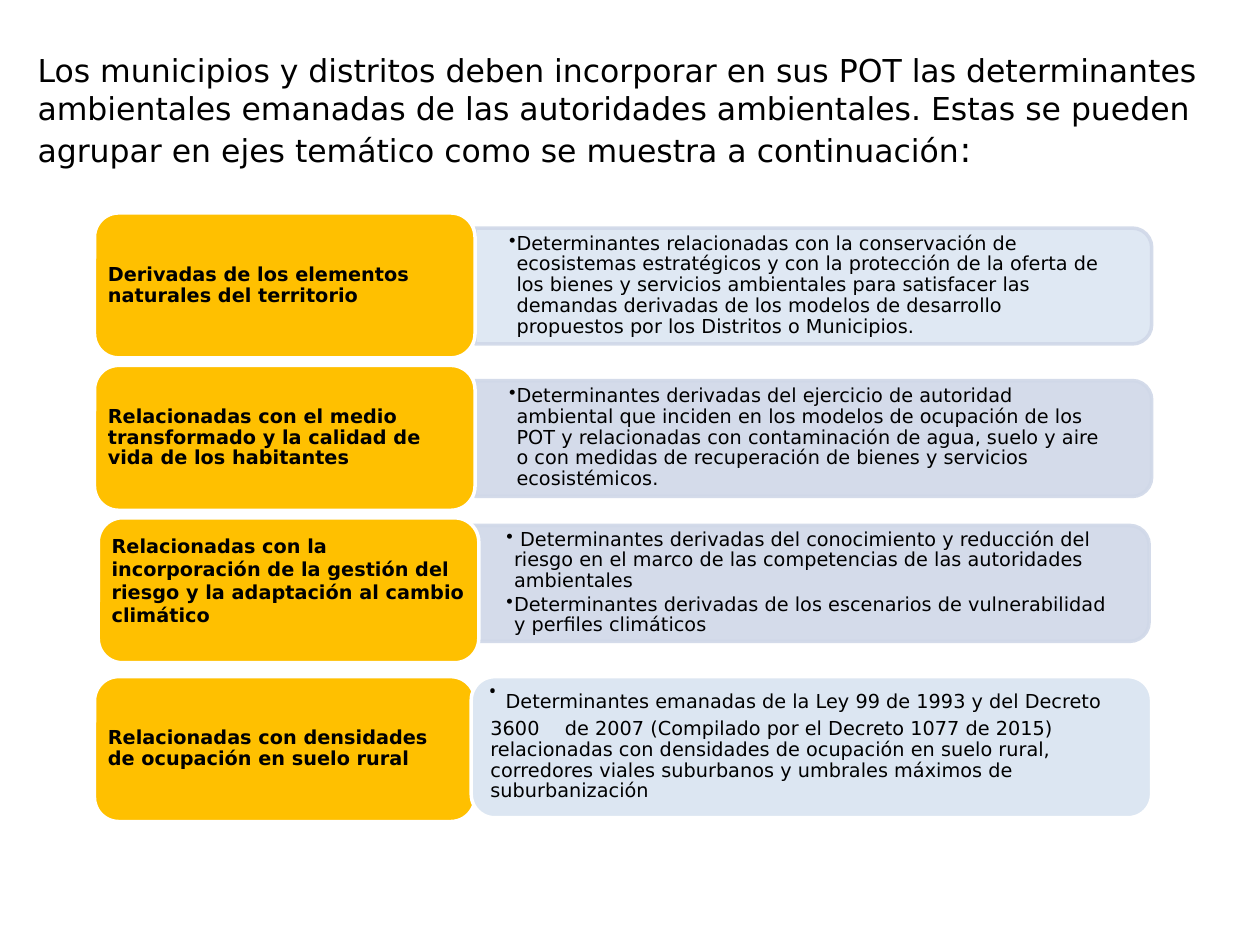
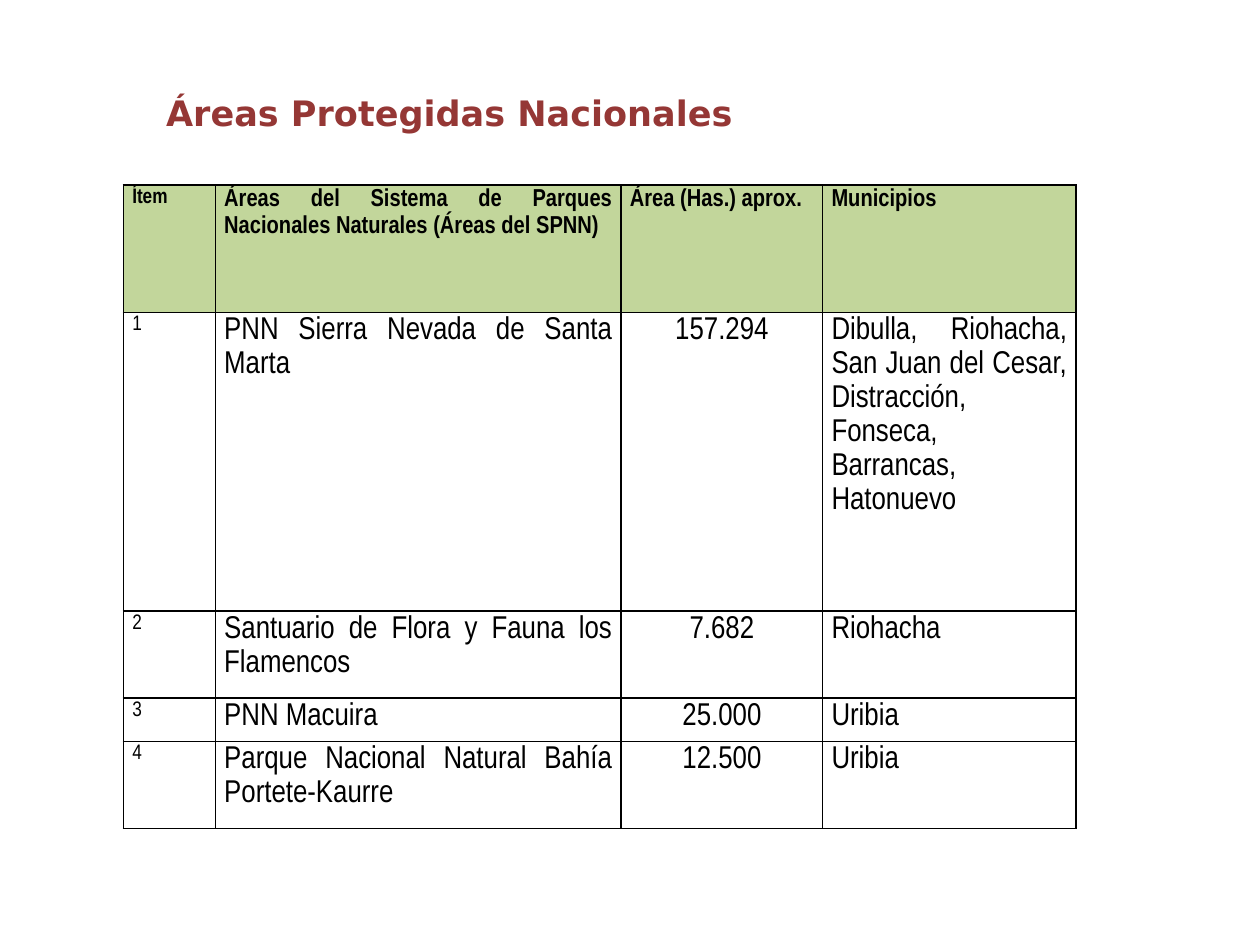
from lxml.etree import SubElement
from pptx import Presentation
from pptx.dml.color import RGBColor
from pptx.enum.shapes import MSO_SHAPE as Preset
from pptx.enum.text import MSO_ANCHOR as Anchor, PP_ALIGN as Align
from pptx.oxml.ns import qn
from pptx.util import Inches, Pt

BLACK = RGBColor(0x00, 0x00, 0x00)
WHITE = RGBColor(0xFF, 0xFF, 0xFF)
AMBER = RGBColor(0xFF, 0xC0, 0x00)
PALE_BLUE = RGBColor(0xDC, 0xE6, 0xF2)
GREY_BLUE = RGBColor(0xD0, 0xD8, 0xE8)
MAROON = RGBColor(0x95, 0x37, 0x35)
GREEN = RGBColor(0xC2, 0xD6, 0x9B)

BODY = {"name": "DejaVu Sans", "size": Pt(11), "bold": False}
INTRO = {**BODY, "size": Pt(18)}
LABEL = {**BODY, "bold": True}
HEADING = {**LABEL, "size": Pt(20)}
DOT_GAP = {**BODY, "name": "Cambria", "size": Pt(28)}
CELL = {"name": "Arial Narrow", "size": Pt(18), "bold": False}
ITEM = {**CELL, "size": Pt(12)}
HEADER = {**CELL, "size": Pt(14), "bold": True}
HEADER_ITEM = {**HEADER, "size": Pt(12)}

TIGHT = {"line_spacing": 0.9}
BULLETED = {**TIGHT, "space_after": Pt(1.5), "level": 1}
JUSTIFIED = {"line_spacing": 1.15, "alignment": Align.JUSTIFY}
CENTRED = {"line_spacing": 1.15, "alignment": Align.CENTER}

PANEL_WIDTH, PANEL_HEIGHT = 5.37, 0.92
LABEL_WIDTH, LABEL_HEIGHT = 3.02, 1.15

AXES = [
    (0.75, 1.69, "Derivadas de los elementos naturales del territorio", 0.02),
    (0.75, 2.9, "Relacionadas con el medio transformado y la calidad de vida de los habitantes", 0.02),
    (0.78, 4.11, "Relacionadas con la incorporación de la gestión del riesgo y la adaptación al "
                 "cambio climático", 0.18),
    (0.75, 5.37, "Relacionadas con densidades de ocupación en suelo rural", 0.02),
]
PANELS = [
    (3.77, 1.81, PALE_BLUE, [
        "Determinantes relacionadas con la conservación de ecosistemas estratégicos y con la "
        "protección de la oferta de los bienes y servicios ambientales para satisfacer las demandas "
        "derivadas de los modelos de desarrollo propuestos por los Distritos o Municipios."]),
    (3.77, 3.02, GREY_BLUE, [
        "Determinantes derivadas del ejercicio de autoridad ambiental que inciden en los modelos de "
        "ocupación de los POT y relacionadas con contaminación de agua, suelo y aire o con medidas "
        "de recuperación de bienes y servicios ecosistémicos."]),
    (3.75, 4.17, GREY_BLUE, [
        " Determinantes derivadas del conocimiento y reducción del riesgo en el marco de las "
        "competencias de las autoridades ambientales",
        "Determinantes derivadas de los escenarios de vulnerabilidad y perfiles climáticos"]),
]
RURAL_DENSITY = (
    "Determinantes emanadas de la Ley 99 de 1993 y del Decreto 3600\tde 2007 (Compilado por el "
    "Decreto 1077 de 2015) relacionadas con densidades de ocupación en suelo rural, corredores "
    "viales suburbanos y umbrales máximos de suburbanización")

AREA_COLUMNS = [0.73, 3.22, 1.6, 2.01]
AREA_ROWS = [1.01, 2.37, 0.68, 0.34, 0.68]
AREAS = [
    ("Ítem", "Áreas del Sistema de Parques Nacionales Naturales (Áreas del SPNN)",
     "Área (Has.) aprox.", "Municipios"),
    ("1", "PNN Sierra Nevada de Santa Marta", "157.294",
     "Dibulla, Riohacha, San Juan del Cesar, Distracción, Fonseca, Barrancas, Hatonuevo"),
    ("2", "Santuario de Flora y Fauna los Flamencos", "7.682", "Riohacha"),
    ("3", "PNN Macuira", "25.000", "Uribia"),
    ("4", "Parque Nacional Natural Bahía Portete-Kaurre", "12.500", "Uribia"),
]


def set_values(target, values):
    for name, value in values.items():
        setattr(target, name, value)


class Deck:
    def __init__(self):
        self.presentation = Presentation()
        self.presentation.slide_width = Inches(10)
        self.presentation.slide_height = Inches(7.5)
        self.slide = None

    def new_slide(self):
        self.slide = self.presentation.slides.add_slide(self.presentation.slide_layouts[6])

    def add_words(self, paragraph, text, font, color=BLACK):
        run = paragraph.add_run()
        run.text = text
        set_values(run.font, font)
        run.font.color.rgb = color

    def frame(self, shape, insets, anchor=Anchor.MIDDLE):
        sides = ("margin_left", "margin_top", "margin_right", "margin_bottom")
        margins = {side: Inches(inset) for side, inset in zip(sides, insets)}
        set_values(shape.text_frame, {**margins, "word_wrap": True, "vertical_anchor": anchor})
        return shape.text_frame

    def bullet(self, paragraph, char="•", hanging=0.0, font=None, percent=100):
        properties = paragraph._p.get_or_add_pPr()
        properties.set("marL", str(Inches(hanging)))
        properties.set("indent", str(-Inches(hanging)))
        SubElement(properties, qn("a:buSzPct"), val=str(percent * 1000))
        if font:
            SubElement(properties, qn("a:buFont"), typeface=font)
        SubElement(properties, qn("a:buChar"), char=char)

    def tab_stop(self, paragraph, position):
        stops = SubElement(paragraph._p.get_or_add_pPr(), qn("a:tabLst"))
        SubElement(stops, qn("a:tab"), pos=str(Inches(position)), algn="l")

    def text(self, box, insets=(0.1, 0.05, 0.1, 0.05), anchor=Anchor.TOP):
        return self.frame(self.slide.shapes.add_textbox(*map(Inches, box)), insets, anchor)

    def shape(self, preset, box, fill, line, alpha=None):
        shape = self.slide.shapes.add_shape(preset, *map(Inches, box))
        shape.shadow.inherit = False
        shape.fill.solid()
        shape.fill.fore_color.rgb = fill
        shape.line.color.rgb = line
        shape.line.width = Pt(2)
        if alpha:
            for color in shape._element.spPr.iter(qn("a:srgbClr")):
                SubElement(color, qn("a:alpha"), val=str(alpha * 1000))
        return shape

    def panel(self, left, top, fill, items):
        shift = (PANEL_WIDTH - PANEL_HEIGHT) / 2
        box = (left + shift, top - shift, PANEL_HEIGHT, PANEL_WIDTH)
        self.shape(Preset.ROUND_2_SAME_RECTANGLE, box, fill, GREY_BLUE, alpha=90).rotation = 90
        frame = self.text((left, top + 0.04, 5.33, 0.83), (0.27, 0.14, 0.27, 0.14), Anchor.MIDDLE)
        for index, item in enumerate(items):
            paragraph = frame.add_paragraph() if index else frame.paragraphs[0]
            set_values(paragraph, BULLETED)
            self.bullet(paragraph, hanging=0.06)
            self.add_words(paragraph, item, BODY)

    def rounded(self, box, fill, insets):
        shape = self.shape(Preset.ROUNDED_RECTANGLE, box, fill, WHITE)
        paragraph = self.frame(shape, insets).paragraphs[0]
        set_values(paragraph, {**TIGHT, "alignment": Align.LEFT})
        return paragraph

    def border(self, cell):
        properties = cell._tc.get_or_add_tcPr()
        for index, side in enumerate(("lnL", "lnR", "lnT", "lnB")):
            line = SubElement(properties, qn("a:" + side), w=str(Pt(1)))
            properties.insert(index, line)
            fill = SubElement(line, qn("a:solidFill"))
            SubElement(fill, qn("a:srgbClr"), val=str(BLACK))

    def table(self, left, top, columns, rows, content):
        box = (left, top, sum(columns), sum(rows))
        table = self.slide.shapes.add_table(len(rows), len(columns), *map(Inches, box)).table
        set_values(table, {"first_row": False, "horz_banding": False})
        for column, width in zip(table.columns, columns):
            column.width = Inches(width)
        for row, height in zip(table.rows, rows):
            row.height = Inches(height)
        for r, texts in enumerate(content):
            fonts = (HEADER_ITEM, HEADER) if r == 0 else (ITEM, CELL)
            for c, text in enumerate(texts):
                cell = table.cell(r, c)
                set_values(cell, {"margin_left": Inches(0.07), "margin_right": Inches(0.07),
                                  "margin_top": 0, "margin_bottom": 0})
                if r == 0:
                    cell.fill.solid()
                    cell.fill.fore_color.rgb = GREEN
                else:
                    cell.fill.background()
                self.border(cell)
                paragraph = cell.text_frame.paragraphs[0]
                set_values(paragraph, CENTRED if r and c == 2 else JUSTIFIED)
                self.add_words(paragraph, text, fonts[min(c, 1)])


def thematic_axes(deck):
    deck.new_slide()
    intro = deck.text((0.2, 0.36, 9.46, 1.06)).paragraphs[0]
    deck.add_words(intro, "Los municipios y distritos deben incorporar en sus POT las determinantes "
                          "ambientales emanadas de las autoridades ambientales. Estas se pueden "
                          "agrupar en ejes temático como se muestra a continuación", INTRO)
    deck.add_words(intro, ":", {**INTRO, "size": Pt(20)})
    for panel in PANELS:
        deck.panel(*panel)
    for left, top, name, bottom_inset in AXES:
        label = deck.rounded((left, top, LABEL_WIDTH, LABEL_HEIGHT), AMBER,
                             (0.05, 0.02, 0.05, bottom_inset))
        if bottom_inset > 0.02:
            label.line_spacing = 1.0
        deck.add_words(label, name, LABEL)
    density = deck.rounded((3.74, 5.37, 5.4, 1.12), PALE_BLUE, (0.1, 0.05, 0.1, 0.26))
    deck.bullet(density, "·", font="Cambria", percent=86)
    deck.tab_stop(density, 0.59)
    deck.add_words(density, " ", DOT_GAP)
    deck.add_words(density, RURAL_DENSITY, BODY)


def protected_areas(deck):
    deck.new_slide()
    heading = deck.text((1.22, 0.68, 8.58, 0.44)).paragraphs[0]
    heading.alignment = Align.JUSTIFY
    deck.add_words(heading, "Áreas Protegidas Nacionales", HEADING, MAROON)
    deck.table(0.98, 1.47, AREA_COLUMNS, AREA_ROWS, AREAS)


def main():
    deck = Deck()
    thematic_axes(deck)
    protected_areas(deck)
    deck.presentation.save("out.pptx")


if __name__ == "__main__":
    main()
